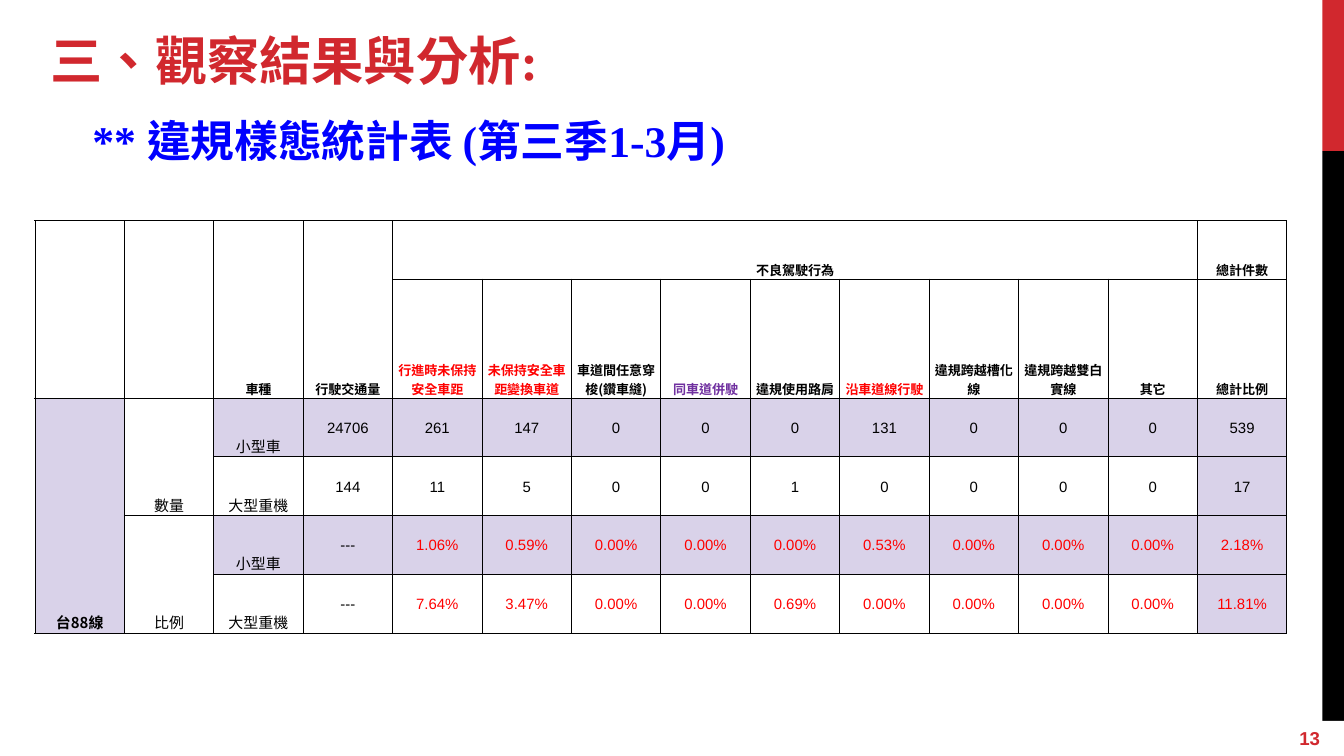
"""Build the slide with the quarterly table of riding violations."""
from lxml.etree import SubElement
from pptx import Presentation
from pptx.dml.color import RGBColor
from pptx.enum.shapes import MSO_SHAPE as Shape
from pptx.enum.text import MSO_ANCHOR as Anchor, PP_ALIGN as Align
from pptx.oxml.ns import qn
from pptx.util import Inches, Pt

W = 10
H = W * 9 / 16
COLORS = {"red": "D1282E", "black": "000000", "white": "FFFFFF", "blue": "0000FF",
          "alert": "FF0000", "purple": "7030A0", "lilac": "D9D2E9"}
CJK, SANS, SERIF = "Noto Sans CJK TC", "Arial", "Times New Roman"
TABLE_W, TABLE_H = 9.32, 3.07
ROW_UNITS = [1, 2.03, 1, 1, 1, 1]
HEAD_COLORS = {4: "alert", 5: "alert", 7: "purple", 9: "alert"}
MERGES = [(0, 0, 1, 0), (0, 1, 1, 1), (0, 2, 1, 2), (0, 3, 1, 3), (0, 4, 0, 12),
          (2, 0, 5, 0), (2, 1, 3, 1), (4, 1, 5, 1)]
ROWS = [
    ["", "", "車種", "行駛交通量", "不良駕駛行為"] + [""] * 8 + ["總計件數"],
    ["", "", "", "", "行進時未保持安全車距", "未保持安全車距變換車道", "車道間任意穿梭(鑽車縫)",
     "同車道併駛", "違規使用路肩", "沿車道線行駛", "違規跨越槽化線", "違規跨越雙白實線",
     "其它", "總計比例"],
    ["台88線", "數量", "小型車", "24706", "261", "147", "0", "0", "0", "131", "0", "0", "0", "539"],
    ["", "", "大型重機", "144", "11", "5", "0", "0", "1", "0", "0", "0", "0", "17"],
    ["", "比例", "小型車", "---", "1.06%", "0.59%", "0.00%", "0.00%", "0.00%", "0.53%",
     "0.00%", "0.00%", "0.00%", "2.18%"],
    ["", "", "大型重機", "---", "7.64%", "3.47%", "0.00%", "0.00%", "0.69%", "0.00%",
     "0.00%", "0.00%", "0.00%", "11.81%"],
]


def rgb(name):
    """Return the named colour."""
    return RGBColor.from_string(COLORS[name])


def write(p, text, size, font, color, bold=True):
    """Put styled text into a paragraph."""
    p.text = text
    f = p.font
    f.size, f.name, f.bold = Pt(size), font, bold
    f.color.rgb = rgb(color)
    props = p._p.pPr.find(qn("a:defRPr"))
    props.set("lang", "zh-TW")
    SubElement(props, qn("a:ea"), typeface=CJK)


def pad(tf):
    """Give a text frame its inner margins."""
    tf.margin_left = tf.margin_right = tf.margin_top = tf.margin_bottom = Inches(0.1)


def add_block(s, left, top, width, height, color):
    """Add a plain filled rectangle."""
    sp = s.shapes.add_shape(Shape.RECTANGLE, *map(Inches, (left, top, width, height)))
    sp.shadow.inherit = False
    sp.fill.solid()
    sp.fill.fore_color.rgb = rgb(color)
    sp.line.fill.background()
    return sp


def add_heading(s, left, top, text, size, color, indent=0):
    """Add one heading line."""
    tf = s.shapes.add_textbox(*map(Inches, (left, top, 0.93 * W, 0.63))).text_frame
    tf.word_wrap = True
    pad(tf)
    p = tf.paragraphs[0]
    write(p, text, size, SERIF, color)
    p._p.pPr.set("marL", str(Inches(indent)))


def add_page_number(s, number):
    """Add the page number in the bottom right corner."""
    sp = add_block(s, W - 0.43, H - 0.26, 0.43, 0.26, "white")
    tf = sp.text_frame
    pad(tf)
    tf.vertical_anchor = Anchor.MIDDLE
    p = tf.paragraphs[0]
    write(p, number, 10, SANS, "red")
    p.alignment = Align.LEFT


def add_borders(cell):
    """Draw thin black lines on all sides of a cell."""
    tc_pr = cell._tc.get_or_add_tcPr()
    for i, side in enumerate(("lnL", "lnR", "lnT", "lnB")):
        ln = tc_pr.makeelement(qn(f"a:{side}"), {"w": str(Pt(0.5))})
        fill = SubElement(ln, qn("a:solidFill"))
        SubElement(fill, qn("a:srgbClr"), val=COLORS["black"])
        tc_pr.insert(i, ln)


def style_cell(cell, r, c, text):
    """Fill and format a cell by its place in the table."""
    head, numeric, last = r < 2, r >= 2 and c >= 3, len(ROWS[0]) - 1
    cell.margin_left = cell.margin_right = cell.margin_top = Inches(0.01)
    cell.margin_bottom = 0
    cell.vertical_anchor = Anchor.MIDDLE if numeric else Anchor.BOTTOM
    if not head and (c in (0, last) or (r % 2 == 0 and c >= 2)):
        cell.fill.solid()
        cell.fill.fore_color.rgb = rgb("lilac")
    else:
        cell.fill.background()
    add_borders(cell)
    if text:
        color = HEAD_COLORS.get(c, "black") if r == 1 else "black"
        if r >= 4 and c >= 4:
            color = "alert"
        p = cell.text_frame.paragraphs[0]
        write(p, text, 7 if head else 8, SANS if numeric else CJK, color, head or c == 0)
        p.alignment = Align.CENTER


def add_violation_table(s):
    """Add the table of violations by vehicle type."""
    n = len(ROWS[0])
    frame = s.shapes.add_table(len(ROWS), n, *map(Inches, (0.26, 1.64, TABLE_W, TABLE_H)))
    table = frame.table
    table.first_row = table.horz_banding = False
    for col in table.columns:
        col.width = Inches(TABLE_W / n)
    for row, units in zip(table.rows, ROW_UNITS):
        row.height = Inches(TABLE_H * units / sum(ROW_UNITS))
    for r, texts in enumerate(ROWS):
        for c, text in enumerate(texts):
            style_cell(table.cell(r, c), r, c, text)
    for top, left, bottom, right in MERGES:
        table.cell(top, left).merge(table.cell(bottom, right))


def main():
    """Build and save the slide."""
    prs = Presentation()
    prs.slide_width, prs.slide_height = Inches(W), Inches(H)
    s = prs.slides.add_slide(prs.slide_layouts[6])
    bar = 0.16
    add_block(s, W - bar, 0, bar, 0.2 * H, "red")
    add_block(s, W - bar, 0.2 * H, bar, 0.8 * H, "black")
    add_page_number(s, "13")
    add_heading(s, 0.26, 0.75, "** 違規樣態統計表 (第三季1-3月)", 23.4, "blue", 0.33)
    add_heading(s, 0.28, 0.11, "三、觀察結果與分析:", 28, "red")
    add_violation_table(s)
    prs.save("out.pptx")


if __name__ == "__main__":
    main()
